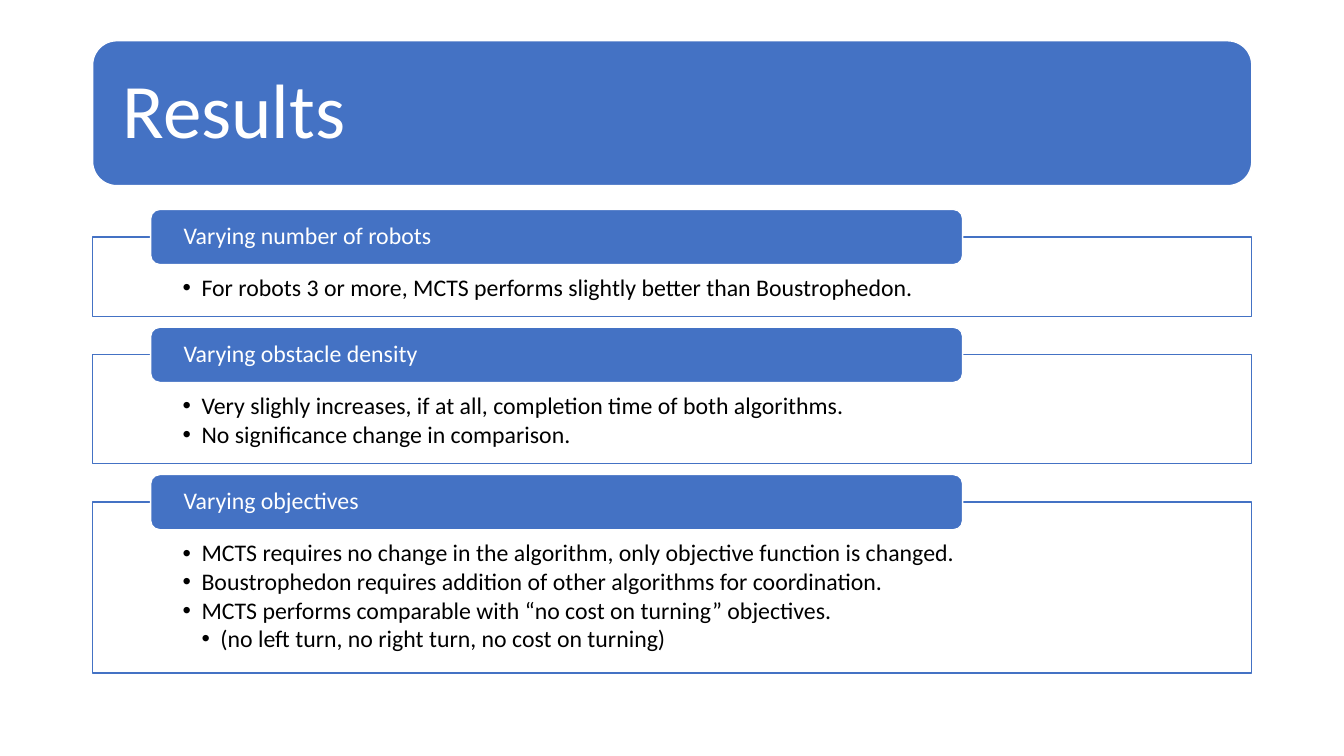
import lxml.etree
import pptx
import pptx.dml.color
import pptx.enum.shapes
import pptx.enum.text
import pptx.oxml.ns
import pptx.util

Pt = pptx.util.Pt
qn = pptx.oxml.ns.qn
SHAPES = pptx.enum.shapes.MSO_SHAPE
ANCHORS = pptx.enum.text.MSO_ANCHOR

BLUE = pptx.dml.color.RGBColor(0x44, 0x72, 0xC4)
WHITE = pptx.dml.color.RGBColor(0xFF, 0xFF, 0xFF)
BLACK = pptx.dml.color.RGBColor(0x00, 0x00, 0x00)

# Layout in points
LEFT, WIDTH = 66.2, 828
TITLE_TOP, TITLE_HEIGHT = 29.1, 103.5
FIRST_FRAME_TOP, FRAME_GAP = 169.2, 27.4
HEADER_INDENT, HEADER_RISE = 41.4, 19.6
HEADER_WIDTH, HEADER_HEIGHT = 580, 39.4
BULLET_INDENT = 13.5

# Heading, frame height, bullets as (level, text)
SECTIONS = [
    ("Varying number of robots", 56.8, [
        (1, "For robots 3 or more, MCTS performs slightly better than Boustrophedon."),
    ]),
    ("Varying obstacle density", 77.8, [
        (1, "Very slighly increases, if at all, completion time of both algorithms."),
        (1, "No significance change in comparison."),
    ]),
    ("Varying objectives", 122.2, [
        (1, "MCTS requires no change in the algorithm, only objective function is changed."),
        (1, "Boustrophedon requires addition of other algorithms for coordination."),
        (1, "MCTS performs comparable with “no cost on turning” objectives."),
        (2, "(no left turn, no right turn, no cost on turning)"),
    ]),
]


class ResultsSlide:
    font_name = "Calibri"
    text_size = 17
    title_size = 55

    def __init__(self, presentation):
        self.slide = presentation.slides.add_slide(presentation.slide_layouts[6])

    def box(self, kind, left, top, width, height, fill, line, insets, anchor):
        shape = self.slide.shapes.add_shape(
            kind, Pt(left), Pt(top), Pt(width), Pt(height))
        shape.shadow.inherit = False
        shape.fill.solid()
        shape.fill.fore_color.rgb = fill
        shape.line.color.rgb = line
        shape.line.width = Pt(1)
        frame = shape.text_frame
        frame.word_wrap = True
        frame.vertical_anchor = anchor
        (frame.margin_left, frame.margin_top,
         frame.margin_right, frame.margin_bottom) = map(Pt, insets)
        return shape

    def style(self, paragraph, size, color):
        paragraph.alignment = pptx.enum.text.PP_ALIGN.LEFT
        paragraph.line_spacing = 0.9
        for run in paragraph.runs:
            run.font.name = self.font_name
            run.font.size = Pt(size)
            run.font.color.rgb = color

    def banner(self, text, left, top, width, height, size, inset):
        shape = self.box(SHAPES.ROUNDED_RECTANGLE, left, top, width, height,
                         BLUE, WHITE, (inset, 0, inset, 0), ANCHORS.MIDDLE)
        shape.text_frame.text = text
        self.style(shape.text_frame.paragraphs[0], size, WHITE)

    def bullet_frame(self, bullets, top, height):
        shape = self.box(SHAPES.RECTANGLE, LEFT, top, WIDTH, height,
                         WHITE, BLUE, (64.3, 28.1, 64.3, 9.4), ANCHORS.TOP)
        # Slightly transparent fill
        color = shape.fill._xPr.find(qn("a:solidFill"))[0]
        lxml.etree.SubElement(color, qn("a:alpha"), val="90000")

        shape.text_frame.text = "\n".join(text for level, text in bullets)
        for paragraph, (level, text) in zip(shape.text_frame.paragraphs, bullets):
            paragraph.level = level
            paragraph.space_after = Pt(2)
            self.style(paragraph, self.text_size, BLACK)
            properties = paragraph._p.get_or_add_pPr()
            properties.set("marL", str(Pt(BULLET_INDENT * level)))
            properties.set("indent", str(Pt(-BULLET_INDENT)))
            lxml.etree.SubElement(properties, qn("a:buFont"), typeface="Arial")
            lxml.etree.SubElement(properties, qn("a:buChar"), char="•")

    def section(self, heading, bullets, top, height):
        self.bullet_frame(bullets, top, height)
        self.banner(heading, LEFT + HEADER_INDENT, top - HEADER_RISE,
                    HEADER_WIDTH, HEADER_HEIGHT, self.text_size, 21.6)


def main():
    presentation = pptx.Presentation()
    presentation.slide_width = Pt(960)
    presentation.slide_height = Pt(540)
    results = ResultsSlide(presentation)

    # Title
    results.banner("Results", LEFT, TITLE_TOP, WIDTH, TITLE_HEIGHT,
                   results.title_size, 16.5)

    # Sections, stacked with equal gaps
    top = FIRST_FRAME_TOP
    for heading, height, bullets in SECTIONS:
        results.section(heading, bullets, top, height)
        top += height + FRAME_GAP

    presentation.save("out.pptx")


if __name__ == "__main__":
    main()
